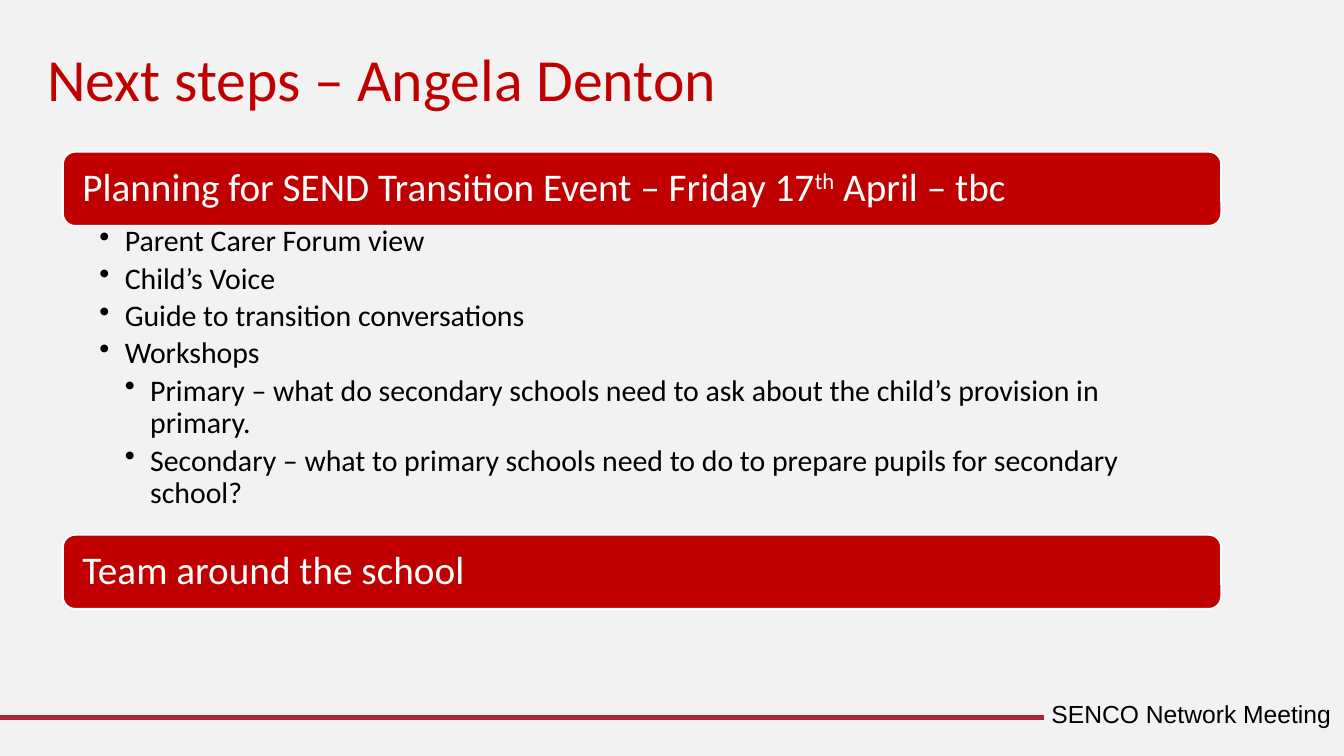
from dataclasses import dataclass

import pptx
import pptx.dml.color
import pptx.enum.shapes
import pptx.enum.text
import pptx.oxml
import pptx.oxml.ns
import pptx.util

Cm = pptx.util.Cm
Pt = pptx.util.Pt
RGBColor = pptx.dml.color.RGBColor
MSO_ANCHOR = pptx.enum.text.MSO_ANCHOR
PP_ALIGN = pptx.enum.text.PP_ALIGN

RED = RGBColor(0xC0, 0x00, 0x00)
CRIMSON = RGBColor(0xAC, 0x24, 0x3C)
WHITE = RGBColor(0xFF, 0xFF, 0xFF)
BLACK = RGBColor(0x00, 0x00, 0x00)
LIGHT_GREY = RGBColor(0xF2, 0xF2, 0xF2)

# Shared column of the heading bars and the bullet list, in cm
LEFT, WIDTH = 1.19, 21.89
BAR_HEIGHT = 1.4
HANG = 0.48


@dataclass
class Run:
    text: str
    superscript: bool = False


@dataclass
class Bar:
    top: float
    runs: list[Run]


@dataclass
class Bullet:
    text: str
    level: int = 1


BARS = [
    Bar(2.87, [
        Run("Planning for SEND Transition Event – Friday 17"),
        Run("th", superscript=True),
        Run(" April – tbc"),
    ]),
    Bar(10.11, [Run("Team around the school")]),
]

BULLETS = [
    Bullet("Parent Carer Forum view"),
    Bullet("Child’s Voice"),
    Bullet("Guide to transition conversations"),
    Bullet("Workshops"),
    Bullet("Primary – what do secondary schools need to ask about the "
           "child’s provision in primary.", 2),
    Bullet("Secondary – what to primary schools need to do to prepare "
           "pupils for secondary school?", 2),
]


def set_font(font, size: float, color: RGBColor, name: str = "Calibri") -> None:
    font.name = name
    font.size = Pt(size)
    font.color.rgb = color


def place(sp, left: float, top: float, width: float, height: float) -> None:
    sp.left, sp.top, sp.width, sp.height = map(Cm, (left, top, width, height))


def set_insets(tf, left: float, top: float, right: float, bottom: float) -> None:
    tf.margin_left, tf.margin_top = Cm(left), Cm(top)
    tf.margin_right, tf.margin_bottom = Cm(right), Cm(bottom)


def add_title(slide, text: str) -> None:
    sp = slide.shapes.title
    place(sp, 0.64, 0.66, 23.04, 1.75)
    tf = sp.text_frame
    tf.text = text
    tf.auto_size = pptx.enum.text.MSO_AUTO_SIZE.NONE
    tf.vertical_anchor = MSO_ANCHOR.TOP
    p = tf.paragraphs[0]
    p.alignment = PP_ALIGN.LEFT
    set_font(p.runs[0].font, 32, RED)


def add_bar(slide, bar: Bar) -> None:
    sp = slide.shapes.add_shape(
        pptx.enum.shapes.MSO_SHAPE.ROUNDED_RECTANGLE,
        Cm(LEFT), Cm(bar.top), Cm(WIDTH), Cm(BAR_HEIGHT))
    sp.shadow.inherit = False
    sp.fill.solid()
    sp.fill.fore_color.rgb = RED
    sp.line.color.rgb = WHITE
    sp.line.width = Pt(1)
    tf = sp.text_frame
    tf.word_wrap = True
    tf.vertical_anchor = MSO_ANCHOR.MIDDLE
    set_insets(tf, 0.3, 0.2, 0.3, 0.2)
    p = tf.paragraphs[0]
    p.alignment = PP_ALIGN.LEFT
    p.line_spacing = 0.9
    for run in bar.runs:
        r = p.add_run()
        r.text = run.text
        set_font(r.font, 21, WHITE)
        if run.superscript:
            r.font._element.set("baseline", "30000")


def add_bullets(slide, bullets: list[Bullet]) -> None:
    sp = slide.shapes.add_textbox(Cm(LEFT), Cm(4.19), Cm(WIDTH), Cm(5.92))
    tf = sp.text_frame
    tf.word_wrap = True
    set_insets(tf, 0.69, 0.08, 0.41, 0.08)
    tf.text = "\n".join(bullet.text for bullet in bullets)
    for p, bullet in zip(tf.paragraphs, bullets):
        p.level = bullet.level
        p.line_spacing = 0.9
        p.space_after = Pt(2.8)
        pPr = p._p.get_or_add_pPr()
        pPr.set("marL", str(Cm(HANG * bullet.level)))
        pPr.set("indent", str(-Cm(HANG)))
        pPr.append(pptx.oxml.parse_xml(
            f'<a:buChar {pptx.oxml.ns.nsdecls("a")} char="•"/>'))
        set_font(p.runs[0].font, 16, BLACK)


def add_footer(slide, text: str) -> None:
    line = slide.shapes.add_connector(
        pptx.enum.shapes.MSO_CONNECTOR.STRAIGHT,
        Cm(0), Cm(13.56), Cm(19.74), Cm(13.56))
    line.line.color.rgb = CRIMSON
    line.line.width = Pt(3)
    line._element.spPr.append(pptx.oxml.parse_xml(
        f'<a:effectLst {pptx.oxml.ns.nsdecls("a")}/>'))

    sp = slide.shapes.add_textbox(Cm(2.36), Cm(13.23), Cm(23.04), Cm(0.66))
    tf = sp.text_frame
    tf.word_wrap = True
    tf.vertical_anchor = MSO_ANCHOR.MIDDLE
    tf.text = text
    p = tf.paragraphs[0]
    p.alignment = PP_ALIGN.RIGHT
    p.line_spacing = 0.7
    set_font(p.runs[0].font, 13.2, BLACK, "Arial")


def main() -> None:
    prs = pptx.Presentation()
    prs.slide_width, prs.slide_height = Cm(25.4), Cm(14.29)
    slide = prs.slides.add_slide(prs.slide_layouts.get_by_name("Title Only"))
    slide.background.fill.solid()
    slide.background.fill.fore_color.rgb = LIGHT_GREY

    # Footer rule and meeting name
    add_footer(slide, "SENCO Network Meeting")

    # Title
    add_title(slide, "Next steps – Angela Denton")

    # Heading bars with the bullet list between them
    for bar in BARS:
        add_bar(slide, bar)
    add_bullets(slide, BULLETS)

    prs.save("out.pptx")


if __name__ == "__main__":
    main()
